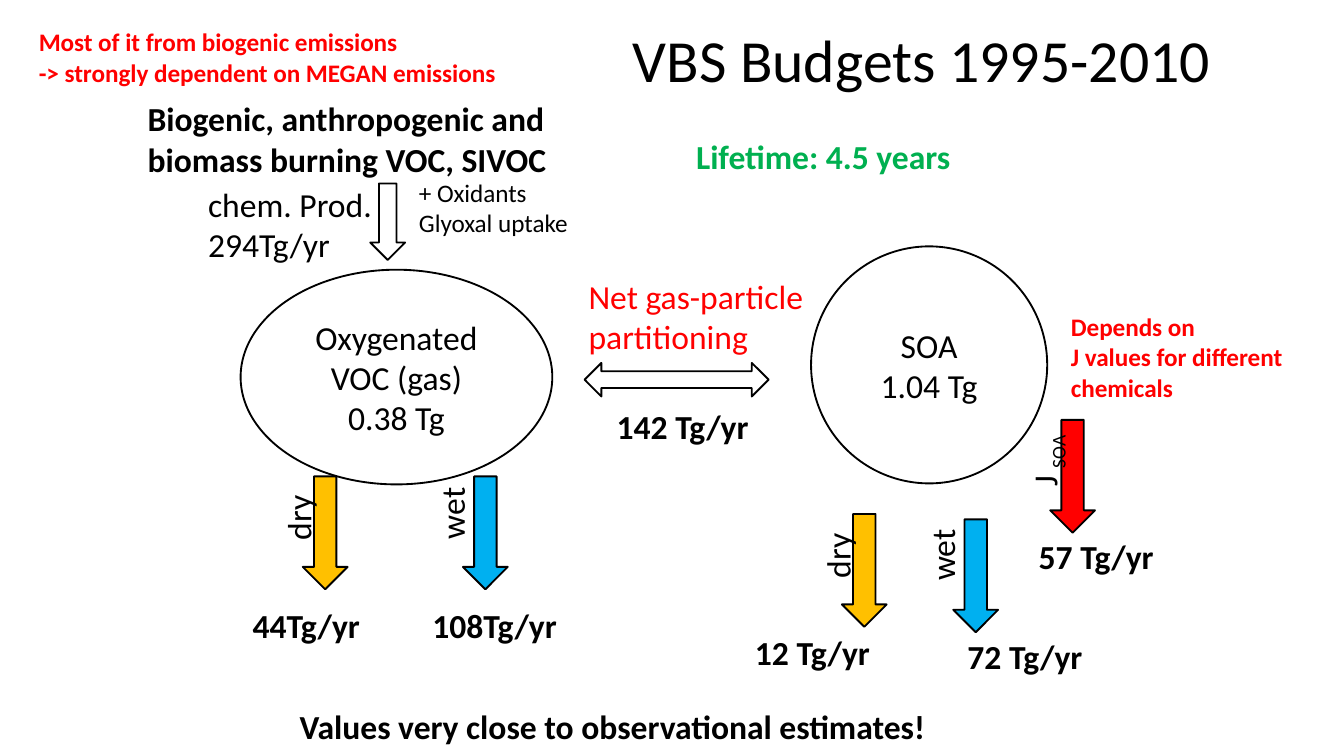
"""Build the VBS budget slide: two reservoirs, the flows between them and their sinks."""
from dataclasses import dataclass

from pptx import Presentation
from pptx.dml.color import RGBColor
from pptx.enum.shapes import MSO_SHAPE
from pptx.enum.text import MSO_ANCHOR, MSO_AUTO_SIZE, PP_ALIGN
from pptx.util import Pt

ELLIPSE = MSO_SHAPE.OVAL
RIGHT_ARROW = MSO_SHAPE.RIGHT_ARROW
EXCHANGE_ARROW = MSO_SHAPE.LEFT_RIGHT_ARROW
MIDDLE = MSO_ANCHOR.MIDDLE
CENTER = PP_ALIGN.CENTER
GROW = MSO_AUTO_SIZE.SHAPE_TO_FIT_TEXT


@dataclass(frozen=True)
class Theme:
    font: str = "Calibri"
    black: str = "000000"
    white: str = "FFFFFF"
    red: str = "FF0000"
    green: str = "00B050"
    dry: str = "FFC000"
    wet: str = "00B0F0"
    title: float = 32
    body: float = 18
    note: float = 13.5
    outline: float = 1


THEME = Theme()


def style_text(shape, size, color, bold=False):
    for paragraph in shape.text_frame.paragraphs:
        for run in paragraph.runs:
            run.font.name = THEME.font
            run.font.size = Pt(size)
            run.font.bold = bold
            run.font.color.rgb = RGBColor.from_string(color)


def add_text(slide, text, left, top, width, height, size=THEME.body,
             color=THEME.black, bold=False, wrap=True):
    box = slide.shapes.add_textbox(Pt(left), Pt(top), Pt(width), Pt(height))
    box.text_frame.text = text
    box.text_frame.word_wrap = wrap
    box.text_frame.auto_size = GROW
    style_text(box, size, color, bold)
    return box


def add_outlined(slide, kind, left, top, width, height, fill=THEME.white):
    shape = slide.shapes.add_shape(kind, Pt(left), Pt(top), Pt(width), Pt(height))
    shape.shadow.inherit = False
    shape.fill.solid()
    shape.fill.fore_color.rgb = RGBColor.from_string(fill)
    shape.line.color.rgb = RGBColor.from_string(THEME.black)
    shape.line.width = Pt(THEME.outline)
    return shape


def add_reservoir(slide, text, left, top, width, height):
    shape = add_outlined(slide, ELLIPSE, left, top, width, height)
    shape.text_frame.text = text
    shape.text_frame.vertical_anchor = MIDDLE
    for paragraph in shape.text_frame.paragraphs:
        paragraph.alignment = CENTER
    style_text(shape, THEME.body, THEME.black)


def add_down_arrow(slide, center_x, center_y, length, thickness, fill=THEME.white):
    arrow = add_outlined(slide, RIGHT_ARROW, center_x - length / 2,
                         center_y - thickness / 2, length, thickness, fill)
    arrow.rotation = 90


def add_upright_label(slide, text, subscript, center_x, center_y):
    width, height = 57.6, 29
    box = add_text(slide, text, center_x - width / 2, center_y - height / 2, width, height)
    box.rotation = 270
    if subscript:
        run = box.text_frame.paragraphs[0].add_run()
        run.text = subscript
        style_text(box, THEME.body, THEME.black)
        run.font._element.set("baseline", "-25000")


def add_sink(slide, name, subscript, fill, arrow_center, label_center, amount, amount_corner):
    add_down_arrow(slide, *arrow_center, 60.5, 24, fill)
    add_upright_label(slide, name, subscript, *label_center)
    add_text(slide, amount, *amount_corner, 116, 29, bold=True)


def add_sinks(slide):
    sinks = [
        ("dry", "", THEME.dry, (174.2, 285.5), (159.8, 267.8), "44Tg/yr", (128.2, 320.4)),
        ("wet", "", THEME.wet, (260, 285.5), (242, 267.1), "108Tg/yr", (224.6, 320.4)),
        ("dry", "", THEME.dry, (463, 305.6), (448.6, 288), "12 Tg/yr", (397.4, 334.8)),
        ("wet", "", THEME.wet, (522.7, 308.5), (504.7, 289.4), "72 Tg/yr", (511.2, 337)),
        ("J ", "SOA", THEME.red, (574.6, 255.2), (559.4, 239), "57 Tg/yr", (549.4, 283.7)),
    ]
    for sink in sinks:
        add_sink(slide, *sink)


def add_headings(slide):
    add_text(slide, "VBS Budgets 1995-2010", 332, 8.6, 327, 46, THEME.title, wrap=False)
    add_text(slide, "Lifetime: 4.5 years", 365.8, 69, 156, 29,
             color=THEME.green, bold=True, wrap=False)
    add_text(slide, "Values very close to observational estimates!", 153.4, 374.4, 353, 29,
             bold=True, wrap=False)


def add_notes_in_red(slide):
    add_text(slide, "Most of it from biogenic emissions\n-> strongly dependent on MEGAN emissions",
             13.7, 10.8, 262, 40, THEME.note, THEME.red, bold=True, wrap=False)
    add_text(slide, "Depends on\nJ values for different chemicals",
             566.6, 163.4, 142.6, 56, THEME.note, THEME.red, bold=True)


def add_production(slide):
    add_text(slide, "Biogenic, anthropogenic and biomass burning VOC, SIVOC",
             72, 49, 228.2, 51, bold=True)
    add_down_arrow(slide, 207.7, 118.8, 41, 18.7)
    add_text(slide, "chem. Prod.\n294Tg/yr", 104.4, 95, 116, 51)
    add_text(slide, "+ Oxidants\nGlyoxal uptake", 217.4, 91.4, 95.8, 40, THEME.note, wrap=False)


def add_partitioning(slide):
    add_text(slide, "Net gas-particle\npartitioning", 308.2, 144, 131, 51,
             color=THEME.red, wrap=False)
    add_outlined(slide, EXCHANGE_ARROW, 313.2, 194.4, 98.6, 18)
    add_text(slide, "142 Tg/yr", 323.3, 213.8, 116, 29, bold=True)


def main():
    presentation = Presentation()
    presentation.slide_width = Pt(720)
    presentation.slide_height = Pt(405)
    slide = presentation.slides.add_slide(presentation.slide_layouts[6])
    add_reservoir(slide, "Oxygenated VOC (gas)\n0.38 Tg", 128.9, 144.5, 167, 115)
    add_reservoir(slide, "SOA\n1.04 Tg", 434.5, 132, 126.5, 127)
    add_production(slide)
    add_partitioning(slide)
    add_sinks(slide)
    add_headings(slide)
    add_notes_in_red(slide)
    presentation.save("out.pptx")


if __name__ == "__main__":
    main()
